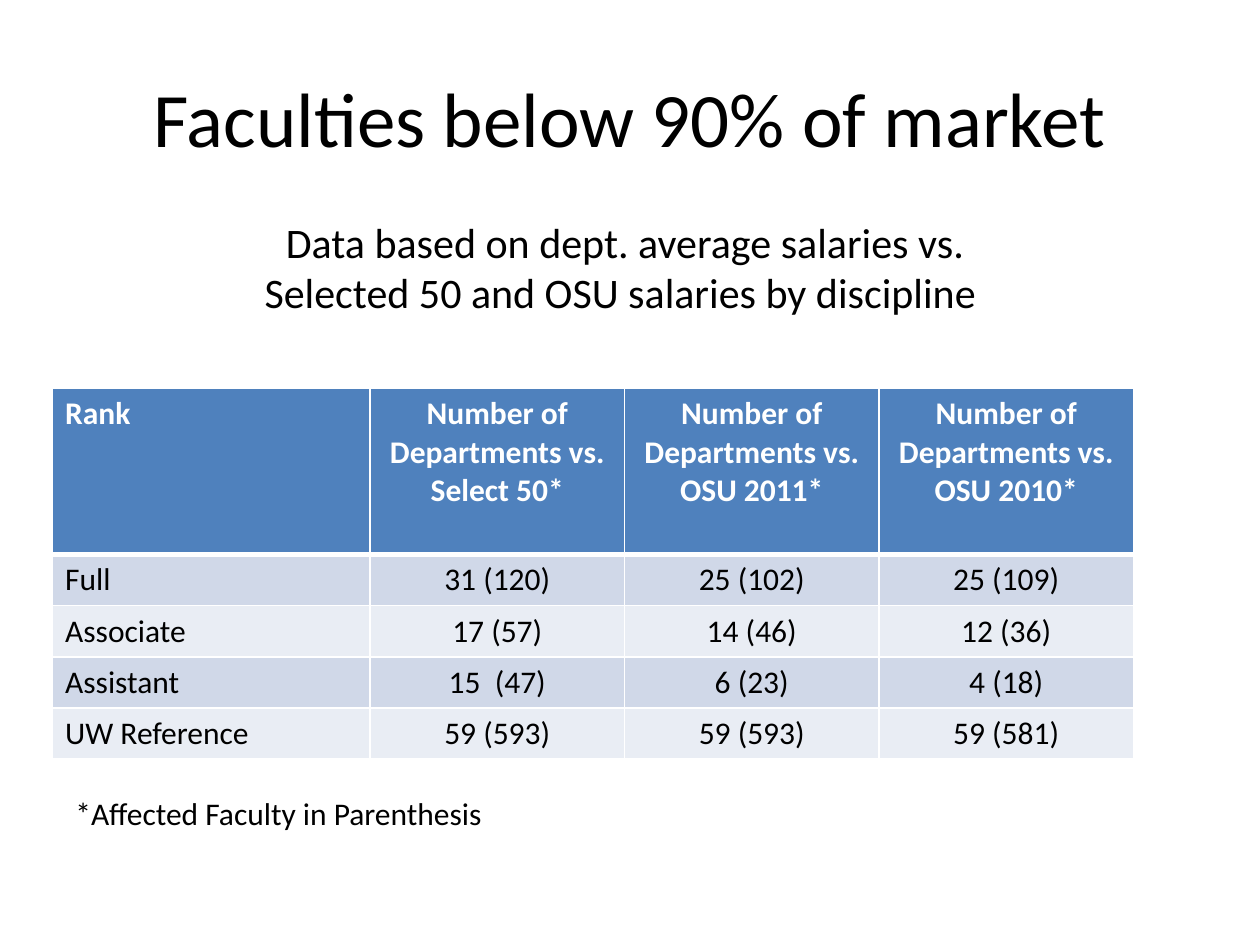
import pptx
import pptx.util
import pptx.dml.color
import pptx.enum.text
import pptx.oxml

Cm = pptx.util.Cm
Pt = pptx.util.Pt
ALIGN = pptx.enum.text.PP_ALIGN
ANCHOR = pptx.enum.text.MSO_ANCHOR
HUES = {"ink": "000000", "white": "FFFFFF", "head": "4F81BD",
        "dark": "D0D8E8", "light": "E9EDF4"}
RANKS = [
    ["Rank"] + [f"Number of Departments vs. {peer}*"
                for peer in ("Select 50", "OSU 2011", "OSU 2010")],
    ["Full", "31 (120)", "25 (102)", "25 (109)"],
    ["Associate", "17 (57)", "14 (46)", "12 (36)"],
    ["Assistant", "15  (47)", "6 (23)", "4 (18)"],
    ["UW Reference", "59 (593)", "59 (593)", "59 (581)"],
]


class Deck:
    font = "Calibri"

    def __init__(self, wide, high):
        self.file = pptx.Presentation()
        self.file.slide_width = Cm(wide)
        self.file.slide_height = Cm(high)
        self.slide = self.file.slides.add_slide(self.file.slide_layouts[5])

    def hue(self, name):
        return pptx.dml.color.RGBColor.from_string(HUES[name])

    def letter(self, frame, text, size, align, hue="ink", bold=False):
        frame.word_wrap = True
        para = frame.paragraphs[0]
        para.text = text
        para.alignment = align
        para.font.name = self.font
        para.font.size = Pt(size)
        para.font.bold = bold
        para.font.color.rgb = self.hue(hue)

    def title(self, text, left, top, wide, high):
        box = self.slide.shapes.title
        box.left, box.top, box.width, box.height = map(Cm, (left, top, wide, high))
        box.text_frame.vertical_anchor = ANCHOR.MIDDLE
        self.letter(box.text_frame, text, 44, ALIGN.CENTER)

    def text(self, text, left, top, wide, high, size, align):
        box = self.slide.shapes.add_textbox(*map(Cm, (left, top, wide, high)))
        self.letter(box.text_frame, text, size, align)

    def edge(self, cell, side, width):
        line = pptx.oxml.parse_xml(
            '<a:ln%s xmlns:a="http://schemas.openxmlformats.org/drawingml/2006/main"'
            ' w="%d"><a:solidFill><a:srgbClr val="%s"/></a:solidFill></a:ln%s>'
            % (side, Pt(width), HUES["white"], side))
        cell._tc.get_or_add_tcPr().append(line)

    def table(self, rows, left, top, cols, highs):
        spot = map(Cm, (left, top, sum(cols), sum(highs)))
        grid = self.slide.shapes.add_table(len(rows), len(cols), *spot).table
        for col, wide in zip(grid.columns, cols):
            col.width = Cm(wide)
        for r, row in enumerate(rows):
            grid.rows[r].height = Cm(highs[r])
            head = r == 0
            fill = "head" if head else "dark" if r % 2 else "light"
            for c, text in enumerate(row):
                cell = grid.cell(r, c)
                for side in "LRTB":
                    thick = (r, side) in ((0, "B"), (1, "T"))
                    self.edge(cell, side, 3 if thick else 1)
                cell.fill.solid()
                cell.fill.fore_color.rgb = self.hue(fill)
                self.letter(cell.text_frame, text, 18,
                            ALIGN.CENTER if c else ALIGN.LEFT,
                            "white" if head else "ink", head)


def main():
    deck = Deck(25.4, 19.05)
    deck.title("Faculties below 90% of market", 1.27, 0.76, 22.86, 3.18)
    deck.table(RANKS, 1.06, 7.83, [6.4] + [5.13] * 3, [3.35] + [1.03] * 4)
    deck.text("Data based on dept. average salaries vs. "
              "Selected 50 and OSU salaries by discipline ",
              4.45, 4.23, 16.3, 3.07, 24, ALIGN.CENTER)
    deck.text("*Affected Faculty in Parenthesis",
              1.27, 15.88, 18.84, 1.06, 18, ALIGN.LEFT)
    deck.file.save("out.pptx")


if __name__ == "__main__":
    main()
